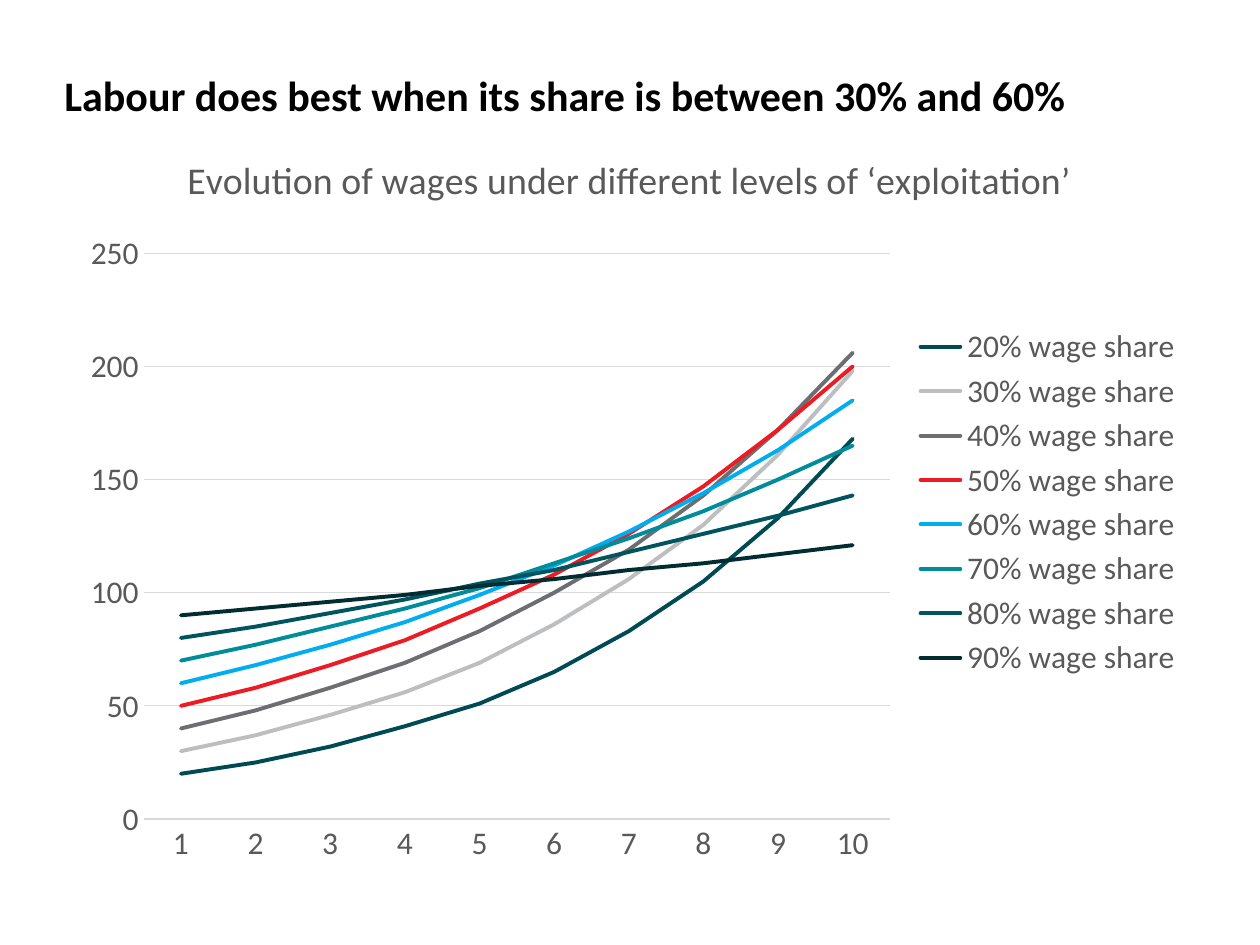
from lxml.etree import SubElement
from pptx import Presentation
from pptx.chart.data import CategoryChartData as ChartData
from pptx.dml.color import RGBColor
from pptx.enum.chart import XL_CHART_TYPE as ChartType
from pptx.enum.chart import XL_LEGEND_POSITION as LegendPosition
from pptx.enum.chart import XL_MARKER_STYLE as Marker
from pptx.enum.chart import XL_TICK_MARK as Tick
from pptx.enum.text import MSO_ANCHOR as Anchor
from pptx.enum.text import PP_ALIGN as Align
from pptx.oxml.ns import qn
from pptx.util import Cm, Pt

BLACK = RGBColor(0x00, 0x00, 0x00)
GREY = RGBColor(0x59, 0x59, 0x59)
GRID = RGBColor(0xD9, 0xD9, 0xD9)
DARK_TEAL = RGBColor(0x00, 0x4A, 0x53)
SILVER = RGBColor(0xBC, 0xBE, 0xC0)
SLATE = RGBColor(0x6D, 0x6E, 0x71)
RED = RGBColor(0xED, 0x1C, 0x24)
BLUE = RGBColor(0x00, 0xAE, 0xEF)
TEAL = RGBColor(0x00, 0x8C, 0x9B)
DEEP_TEAL = RGBColor(0x00, 0x54, 0x5D)
NIGHT_TEAL = RGBColor(0x00, 0x2C, 0x32)

SHARE_COLOURS = {
    20: DARK_TEAL, 30: SILVER, 40: SLATE, 50: RED,
    60: BLUE, 70: TEAL, 80: DEEP_TEAL, 90: NIGHT_TEAL,
}
PERIODS = 10
# Inner plot area as fractions of the chart frame
PLOT_AREA = {"x": 0.07, "y": 0.17, "w": 0.66, "h": 0.75}


def wages(share):
    """Wages grow each period by a third of the share left to capital."""
    growth = 1 + (100 - share) / 300
    return [round(share * growth ** period) for period in range(PERIODS)]


class SlideBuilder:
    font_name = "Calibri"

    def __init__(self, page):
        self.page = page

    def style(self, font, size, colour, bold=False):
        font.name = self.font_name
        font.size = Pt(size)
        font.bold = bold
        font.color.rgb = colour

    def title(self, text, left, top, width, height):
        box = self.page.shapes.title
        box.left, box.top, box.width, box.height = left, top, width, height
        frame = box.text_frame
        frame.margin_left = frame.margin_right = 0
        frame.margin_top = frame.margin_bottom = 0
        frame.vertical_anchor = Anchor.MIDDLE
        frame.text = text
        para = frame.paragraphs[0]
        para.alignment = Align.LEFT
        self.style(para.runs[0].font, 24, BLACK, bold=True)

    def line_chart(self, heading, data, colours, left, top, width, height):
        chart = self.page.shapes.add_chart(
            ChartType.LINE, left, top, width, height, data).chart
        self.style(chart.font, 18, GREY)

        # Heading and legend
        chart.has_title = True
        frame = chart.chart_title.text_frame
        frame.text = heading
        self.style(frame.paragraphs[0].runs[0].font, 21.6, GREY)
        chart.has_legend = True
        chart.legend.position = LegendPosition.RIGHT
        chart.legend.include_in_layout = False
        self.style(chart.legend.font, 18, GREY)

        # Axes
        for axis in (chart.category_axis, chart.value_axis):
            axis.major_tick_mark = axis.minor_tick_mark = Tick.NONE
            self.style(axis.tick_labels.font, 18, GREY)
        value_axis = chart.value_axis
        value_axis.minimum_scale, value_axis.maximum_scale = 0, 250
        value_axis.major_unit = 50
        value_axis.format.line.fill.background()
        for line in (chart.category_axis.format.line,
                     value_axis.major_gridlines.format.line):
            line.color.rgb = GRID
            line.width = Pt(0.75)

        # Series
        plot = chart.plots[0]
        plot.vary_by_categories = False
        for series, colour in zip(plot.series, colours):
            series.smooth = False
            series.marker.style = Marker.NONE
            series.format.line.color.rgb = colour
            series.format.line.width = Pt(2.25)
            series.format.line._ln.set("cap", "rnd")
        self.place_plot(chart)

    def place_plot(self, chart):
        area = chart._chartSpace.chart.plotArea
        layout = area.find(qn("c:layout"))
        if layout is None:
            layout = SubElement(area, qn("c:layout"))
            area.insert(0, layout)
        manual = SubElement(layout, qn("c:manualLayout"))
        settings = {"layoutTarget": "inner", "xMode": "edge", "yMode": "edge"}
        for name, value in {**settings, **PLOT_AREA}.items():
            SubElement(manual, qn(f"c:{name}")).set("val", str(value))


def main():
    deck = Presentation()
    deck.slide_width, deck.slide_height = Cm(25.4), Cm(19.05)
    builder = SlideBuilder(deck.slides.add_slide(deck.slide_layouts[5]))

    # Title
    left, width = Cm(1.3), Cm(22.8)
    builder.title("Labour does best when its share is between 30% and 60%",
                  left, Cm(1.3), width, Cm(1.22))

    # Wages by period, one line for each wage share
    data = ChartData()
    data.categories = [str(period + 1) for period in range(PERIODS)]
    for share in SHARE_COLOURS:
        data.add_series(f"{share}% wage share", wages(share))
    builder.line_chart(
        "Evolution of wages under different levels of ‘exploitation’",
        data, SHARE_COLOURS.values(), left, Cm(2.52), width, Cm(15.21))

    deck.save("out.pptx")


if __name__ == "__main__":
    main()
